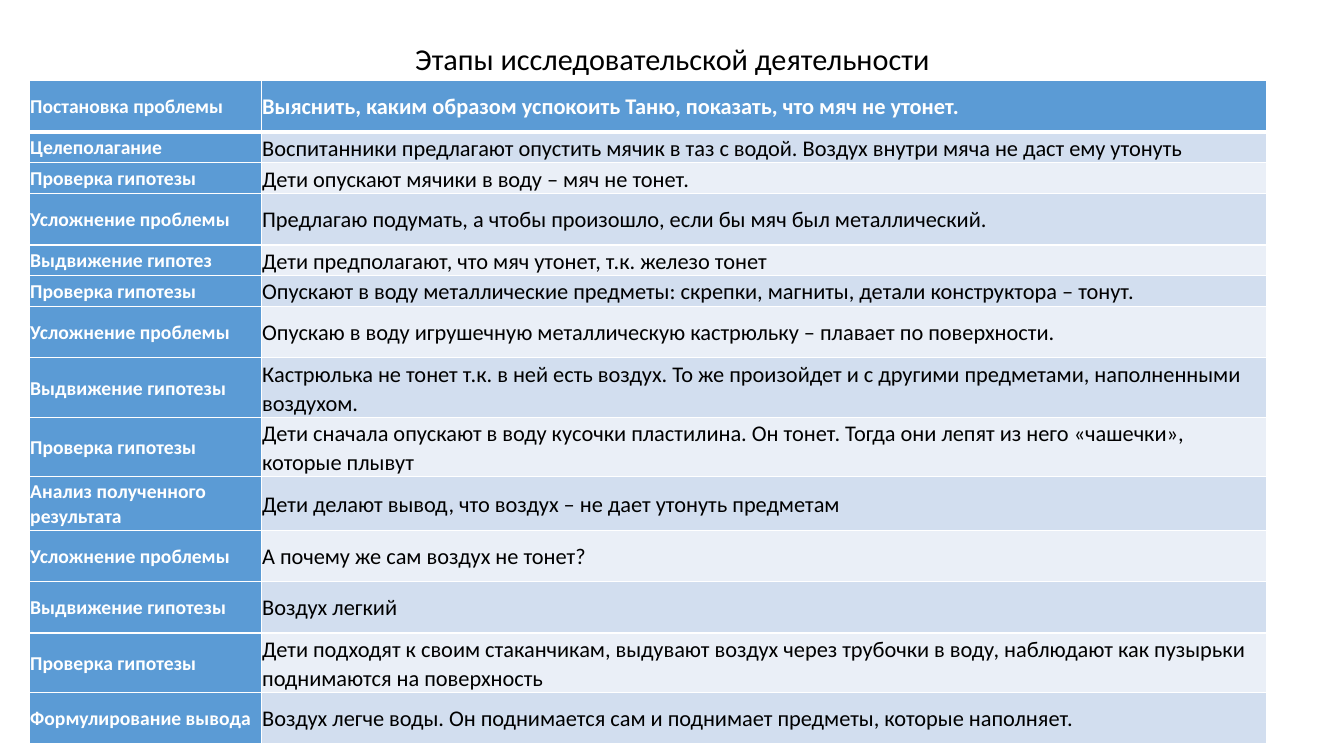
from lxml.etree import SubElement
from pptx import Presentation
from pptx.dml.color import RGBColor
from pptx.enum.text import MSO_ANCHOR, PP_ALIGN
from pptx.oxml.ns import qn
from pptx.util import Inches, Pt

WHITE = RGBColor(0xFF, 0xFF, 0xFF)
BLACK = RGBColor(0x00, 0x00, 0x00)
BLUE = RGBColor(0x5B, 0x9B, 0xD5)
DARK_BAND = RGBColor(0xD2, 0xDE, 0xEF)
LIGHT_BAND = RGBColor(0xEA, 0xEF, 0xF7)

COLUMN_WIDTHS = [2.3, 9.97]
ONE_LINE, SPACIOUS, TWO_LINES = 0.3, 0.51, 0.59
STAGES = [
    (SPACIOUS, "Постановка проблемы",
     "Выяснить, каким образом успокоить Таню, показать, что мяч не утонет."),
    (ONE_LINE, "Целеполагание",
     "Воспитанники предлагают опустить мячик в таз с водой. "
     "Воздух внутри мяча не даст ему утонуть"),
    (ONE_LINE, "Проверка гипотезы", "Дети опускают мячики в воду – мяч не тонет."),
    (SPACIOUS, "Усложнение проблемы",
     "Предлагаю подумать, а чтобы произошло, если бы мяч был металлический."),
    (ONE_LINE, "Выдвижение гипотез",
     "Дети предполагают, что мяч утонет, т.к. железо тонет"),
    (ONE_LINE, "Проверка гипотезы",
     "Опускают в воду металлические предметы: скрепки, магниты, "
     "детали конструктора – тонут."),
    (SPACIOUS, "Усложнение проблемы",
     "Опускаю в воду игрушечную металлическую кастрюльку – плавает по поверхности."),
    (TWO_LINES, "Выдвижение гипотезы",
     "Кастрюлька не тонет т.к. в ней есть воздух. "
     "То же произойдет и с другими предметами, наполненными воздухом."),
    (TWO_LINES, "Проверка гипотезы",
     "Дети сначала опускают в воду кусочки пластилина. Он тонет. "
     "Тогда они лепят из него «чашечки», которые плывут"),
    (0.53, "Анализ полученного результата",
     "Дети делают вывод, что воздух – не дает утонуть предметам"),
    (SPACIOUS, "Усложнение проблемы", "А почему же сам воздух не тонет?"),
    (SPACIOUS, "Выдвижение гипотезы", "Воздух легкий"),
    (TWO_LINES, "Проверка гипотезы",
     "Дети подходят к своим стаканчикам, выдувают воздух через трубочки в воду, "
     "наблюдают как пузырьки поднимаются на поверхность"),
    (SPACIOUS, "Формулирование вывода",
     "Воздух легче воды. Он поднимается сам и поднимает предметы, "
     "которые наполняет."),
]


def write(frame, text, size, color=BLACK, bold=False, align=PP_ALIGN.LEFT,
          line_spacing=1.07, space_after=7.5):
    para = frame.paragraphs[0]
    para.alignment = align
    para.line_spacing = line_spacing
    para.space_after = Pt(space_after)
    span = para.add_run()
    span.text = text
    span.font.name = "Calibri"
    span.font.size = Pt(size)
    span.font.bold = bold
    span.font.color.rgb = color


def add_border(cell, side, width):
    """Draw a white border; side is L, R, T or B and width is in points."""
    line = SubElement(cell._tc.get_or_add_tcPr(), qn(f"a:ln{side}"), w=str(Pt(width)))
    fill = SubElement(line, qn("a:solidFill"))
    SubElement(fill, qn("a:srgbClr"), val=str(WHITE))


deck = Presentation()
deck.slide_width, deck.slide_height = Inches(13.33), Inches(7.5)
page = deck.slides.add_slide(deck.slide_layouts[6])

title = page.shapes.add_textbox(Inches(0.92), Inches(0.41), Inches(11.5), Inches(0.39))
title.text_frame.word_wrap = True
title.text_frame.vertical_anchor = MSO_ANCHOR.MIDDLE
write(title.text_frame, "Этапы исследовательской деятельности", 21.6,
      align=PP_ALIGN.CENTER, line_spacing=0.9, space_after=0)

table = page.shapes.add_table(
    len(STAGES), len(COLUMN_WIDTHS), Inches(0.29), Inches(0.8),
    Inches(sum(COLUMN_WIDTHS)), Inches(sum(stage[0] for stage in STAGES))).table
for column, width in zip(table.columns, COLUMN_WIDTHS):
    column.width = Inches(width)

for row_index, (height, *texts) in enumerate(STAGES):
    table.rows[row_index].height = Inches(height)
    for column_index, text in enumerate(texts):
        cell = table.cell(row_index, column_index)
        cell.vertical_anchor = MSO_ANCHOR.MIDDLE
        cell.margin_left = cell.margin_right = Inches(0.01)
        cell.margin_top = cell.margin_bottom = Inches(0.01)
        add_border(cell, "L", 1)
        add_border(cell, "R", 1)
        add_border(cell, "T", 3 if row_index == 1 else 1)
        add_border(cell, "B", 3 if row_index == 0 else 1)
        heading = row_index == 0 or column_index == 0
        band = DARK_BAND if row_index % 2 else LIGHT_BAND
        cell.fill.solid()
        cell.fill.fore_color.rgb = BLUE if heading else band
        write(cell.text_frame, text, 16 if column_index else 14,
              color=WHITE if heading else BLACK, bold=heading)

deck.save("out.pptx")
